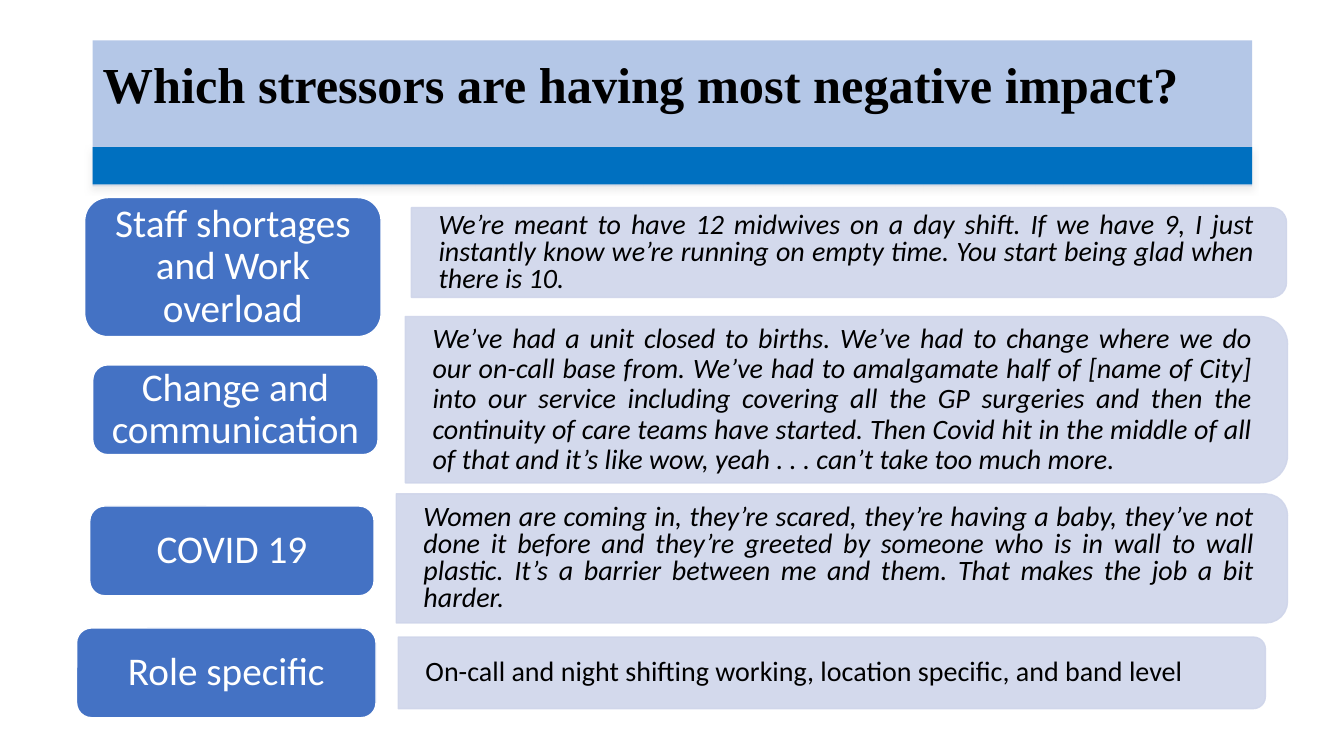
from lxml import etree
from pptx import Presentation
from pptx.dml.color import RGBColor
from pptx.enum.shapes import MSO_SHAPE
from pptx.enum.text import MSO_ANCHOR, PP_ALIGN
from pptx.oxml import parse_xml
from pptx.oxml.ns import nsdecls, qn
from pptx.util import Inches, Pt

RECT = MSO_SHAPE.RECTANGLE
ROUNDED = MSO_SHAPE.ROUNDED_RECTANGLE
ROUND_TWO = MSO_SHAPE.ROUND_2_SAME_RECTANGLE
MIDDLE = MSO_ANCHOR.MIDDLE
LEFT, CENTER, JUSTIFY = PP_ALIGN.LEFT, PP_ALIGN.CENTER, PP_ALIGN.JUSTIFY

HEADING = "Which stressors are having most negative impact?"
HEADING_BOX = (0.92, 0.4, 11.5, 1.45)
BAR_BOX = (0.92, 1.46, 11.5, 0.37)

STRESSORS = [
    {
        "label": "Staff shortages and Work overload",
        "label_box": (0.84, 1.96, 2.94, 1.38),
        "quote": "We’re meant to have 12 midwives on a day shift. If we have 9, I just "
                 "instantly know we’re running on empty time. You start being glad when "
                 "there is 10.",
        "panel_box": (4.08, 2.06, 8.68, 0.89),
        "text_box": (4.08, 2.11, 8.63, 0.81),
        "spacing": 0.8, "italic": True,
    },
    {
        "label": "Change and communication",
        "label_box": (0.92, 3.62, 2.83, 0.89),
        "quote": "We’ve had a unit closed to births. We’ve had to change where we do our "
                 "on-call base from. We’ve had to amalgamate half of [name of City] into our "
                 "service including covering all the GP surgeries and then the continuity of "
                 "care teams have started. Then Covid hit in the middle of all of that and "
                 "it’s like wow, yeah . . . can’t take too much more.",
        "panel_box": (4.02, 3.14, 8.75, 1.65),
        "text_box": (4.02, 3.22, 8.67, 1.49),
        "spacing": 0.9, "italic": True,
    },
    {
        "label": "COVID 19",
        "label_box": (0.89, 5.02, 2.82, 0.89),
        "quote": "Women are coming in, they’re scared, they’re having a baby, they’ve not "
                 "done it before and they’re greeted by someone who is in wall to wall "
                 "plastic. It’s a barrier between me and them. That makes the job a bit "
                 "harder.",
        "panel_box": (3.93, 4.9, 8.84, 1.28),
        "text_box": (3.93, 4.97, 8.78, 1.15),
        "spacing": 0.8, "italic": True,
    },
    {
        "label": "Role specific",
        "label_box": (0.76, 6.23, 2.97, 0.89),
        "quote": "On-call and night shifting working, location specific, and band level",
        "panel_box": (3.95, 6.32, 8.6, 0.71),
        "text_box": (3.95, 6.36, 8.56, 0.64),
        "spacing": 0.8, "italic": False,
    },
]

HEADING_FONT = {"name": "Times New Roman", "size": Pt(36), "bold": True}
LABEL_FONT = {"name": "Calibri", "size": Pt(28)}
QUOTE_FONT = {"name": "Calibri", "size": Pt(20)}
HEADING_INSETS = (0.1, 0.05, 0.1, 0.57)
LABEL_INSETS = (0.12, 0.06, 0.12, 0.06)
QUOTE_INSETS = (0.27, 0.14, 0.27, 0.14)


def rgb(color):
    return RGBColor.from_string(color)


def add_block(kind, box, fill, line=None):
    block = slide.shapes.add_shape(kind, *map(Inches, box))
    block.shadow.inherit = False
    block.fill.solid()
    block.fill.fore_color.rgb = rgb(fill)
    if line:
        block.line.color.rgb = rgb(line)
        block.line.width = Pt(1)
    else:
        block.line.fill.background()
    return block


def write(holder, text, font, color, align, spacing, insets):
    frame = holder.text_frame
    left, top, right, bottom = map(Inches, insets)
    layout = {"word_wrap": True, "vertical_anchor": MIDDLE, "margin_left": left,
              "margin_top": top, "margin_right": right, "margin_bottom": bottom}
    for key, value in layout.items():
        setattr(frame, key, value)
    paragraph = frame.paragraphs[0]
    paragraph.alignment = align
    paragraph.line_spacing = spacing
    run = paragraph.add_run()
    run.text = text
    for key, value in font.items():
        setattr(run.font, key, value)
    run.font.color.rgb = rgb(color)


def add_panel(box):
    left, top, width, height = box
    turned = (left + (width - height) / 2, top + (height - width) / 2, height, width)
    panel = add_block(ROUND_TWO, turned, "CFD5EA", "CFD5EA")
    panel.rotation = 90
    for color in panel.element.spPr.iter(qn("a:srgbClr")):
        etree.SubElement(color, qn("a:alpha")).set("val", "90000")


def add_soft_shadow(block):
    effects = block.element.spPr.find(qn("a:effectLst"))
    effects.append(parse_xml(
        f'<a:outerShdw {nsdecls("a")} blurRad="{Pt(5)}" dist="{Pt(3)}" dir="{106 * 60000}" '
        'algn="t" rotWithShape="0"><a:srgbClr val="E7E6E6"><a:alpha val="75000"/>'
        '</a:srgbClr></a:outerShdw>'))


deck = Presentation()
deck.slide_width, deck.slide_height = Inches(13.33), Inches(7.5)
slide = deck.slides.add_slide(deck.slide_layouts[6])

heading = add_block(RECT, HEADING_BOX, "B4C7E7")
write(heading, HEADING, HEADING_FONT, "000000", LEFT, 0.9, HEADING_INSETS)
add_soft_shadow(add_block(RECT, BAR_BOX, "0070C0"))

for stressor in STRESSORS:
    add_panel(stressor["panel_box"])
    quote = slide.shapes.add_textbox(*map(Inches, stressor["text_box"]))
    write(quote, stressor["quote"], {**QUOTE_FONT, "italic": stressor["italic"]},
          "000000", JUSTIFY, stressor["spacing"], QUOTE_INSETS)
    label = add_block(ROUNDED, stressor["label_box"], "4472C4", "FFFFFF")
    write(label, stressor["label"], LABEL_FONT, "FFFFFF", CENTER, 0.9, LABEL_INSETS)

deck.save("out.pptx")
